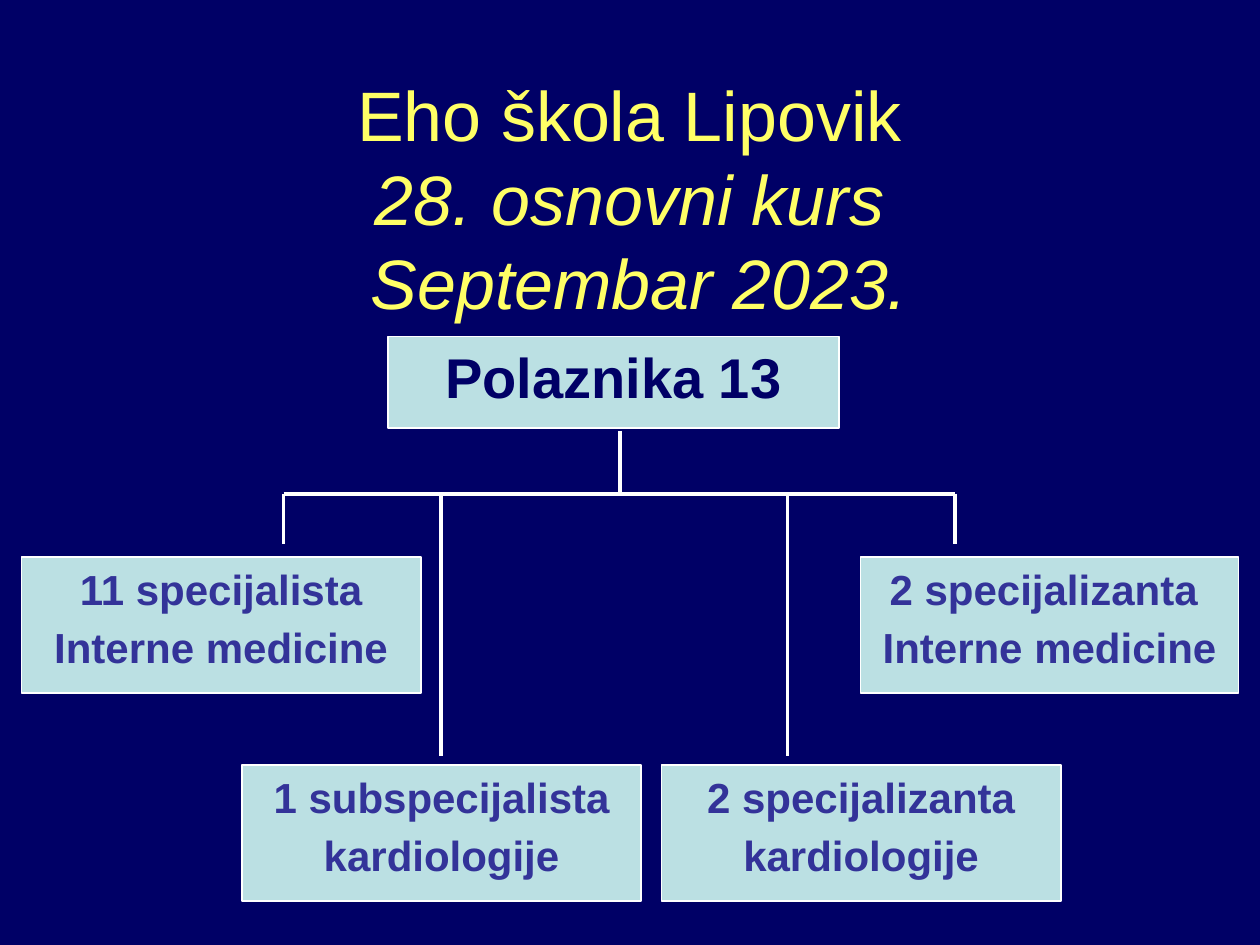
from dataclasses import dataclass

from lxml import etree
from pptx import Presentation
from pptx.dml.color import RGBColor
from pptx.enum.shapes import MSO_CONNECTOR, MSO_SHAPE
from pptx.enum.text import MSO_ANCHOR, PP_ALIGN
from pptx.oxml.ns import qn
from pptx.util import Inches, Pt

RECT = MSO_SHAPE.RECTANGLE
STRAIGHT = MSO_CONNECTOR.STRAIGHT
CENTER = PP_ALIGN.CENTER
TOP, MIDDLE = MSO_ANCHOR.TOP, MSO_ANCHOR.MIDDLE


@dataclass(frozen=True)
class Theme:
    font: str = "Arial"
    back: str = "000066"
    title: str = "FFFF66"
    box: str = "BBE0E3"
    line: str = "FFFFFF"
    head: str = "000066"
    body: str = "333399"
    title_size: int = 40
    head_size: int = 32
    body_size: int = 24
    edge: float = 1
    rule: float = 2.25
    gap: float = 0.2  # space before a paragraph, as a share of its type size


THEME = Theme()


def color(code):
    return RGBColor.from_string(code)


def style(run, size, code, **form):
    values = {"name": THEME.font, "size": Pt(size), **form}
    for key, value in values.items():
        setattr(run.font, key, value)
    run.font.color.rgb = color(code)


def add_title(slide, area, lines):
    """Centred title; every line after the first is italic."""
    frame = slide.shapes.add_textbox(*map(Inches, area)).text_frame
    frame.word_wrap = True
    frame.vertical_anchor = MIDDLE
    para = frame.paragraphs[0]
    para.alignment = CENTER
    for i, line in enumerate(lines):
        if i:
            para.add_line_break()
        run = para.add_run()
        run.text = line
        style(run, THEME.title_size, THEME.title, italic=i > 0)


def add_box(slide, area, lines, size, code):
    box = slide.shapes.add_shape(RECT, *map(Inches, area))
    box.shadow.inherit = False
    box.fill.solid()
    box.fill.fore_color.rgb = color(THEME.box)
    box.line.color.rgb = color(THEME.line)
    box.line.width = Pt(THEME.edge)
    frame = box.text_frame
    frame.word_wrap = True
    frame.vertical_anchor = TOP
    for i, line in enumerate(lines):
        para = frame.add_paragraph() if i else frame.paragraphs[0]
        para.alignment = CENTER
        para.space_before = Pt(size * THEME.gap)
        run = para.add_run()
        run.text = line
        style(run, size, code, bold=True)


def add_line(slide, *ends):
    line = slide.shapes.add_connector(STRAIGHT, *map(Inches, ends))
    line.line.color.rgb = color(THEME.line)
    line.line.width = Pt(THEME.rule)
    etree.SubElement(line._element.spPr, qn("a:effectLst"))


def main():
    deck = Presentation()
    deck.slide_width, deck.slide_height = Inches(10), Inches(7.5)
    slide = deck.slides.add_slide(deck.slide_layouts[6])
    slide.background.fill.solid()
    slide.background.fill.fore_color.rgb = color(THEME.back)

    # Title and total
    add_title(slide, (0.33, 0.3, 9.33, 2.53),
              ["Eho škola Lipovik", "28. osnovni kurs", " Septembar 2023."])
    add_box(slide, (3.08, 2.67, 3.58, 0.73), ["Polaznika 13"],
            THEME.head_size, THEME.head)

    # Trunk, crossbar and drops to the groups
    bar, left, right = 3.92, 2.25, 7.58
    add_line(slide, 4.92, 3.42, 4.92, bar)
    add_line(slide, left, bar, right, bar)
    for x, end in ((left, 4.32), (right, 4.32), (3.5, 6), (6.25, 6)):
        add_line(slide, x, bar, x, end)

    # Groups in two rows
    upper, lower, high = 4.42, 6.07, 1.08
    groups = [
        (0.17, upper, 3.17, "11 specijalista", "Interne medicine"),
        (6.83, upper, 3, "2 specijalizanta ", "Interne medicine"),
        (1.92, lower, 3.17, "1 subspecijalista", "kardiologije"),
        (5.25, lower, 3.17, "2 specijalizanta", "kardiologije"),
    ]
    for x, y, wide, *lines in groups:
        add_box(slide, (x, y, wide, high), lines,
                THEME.body_size, THEME.body)

    deck.save("out.pptx")


if __name__ == "__main__":
    main()
